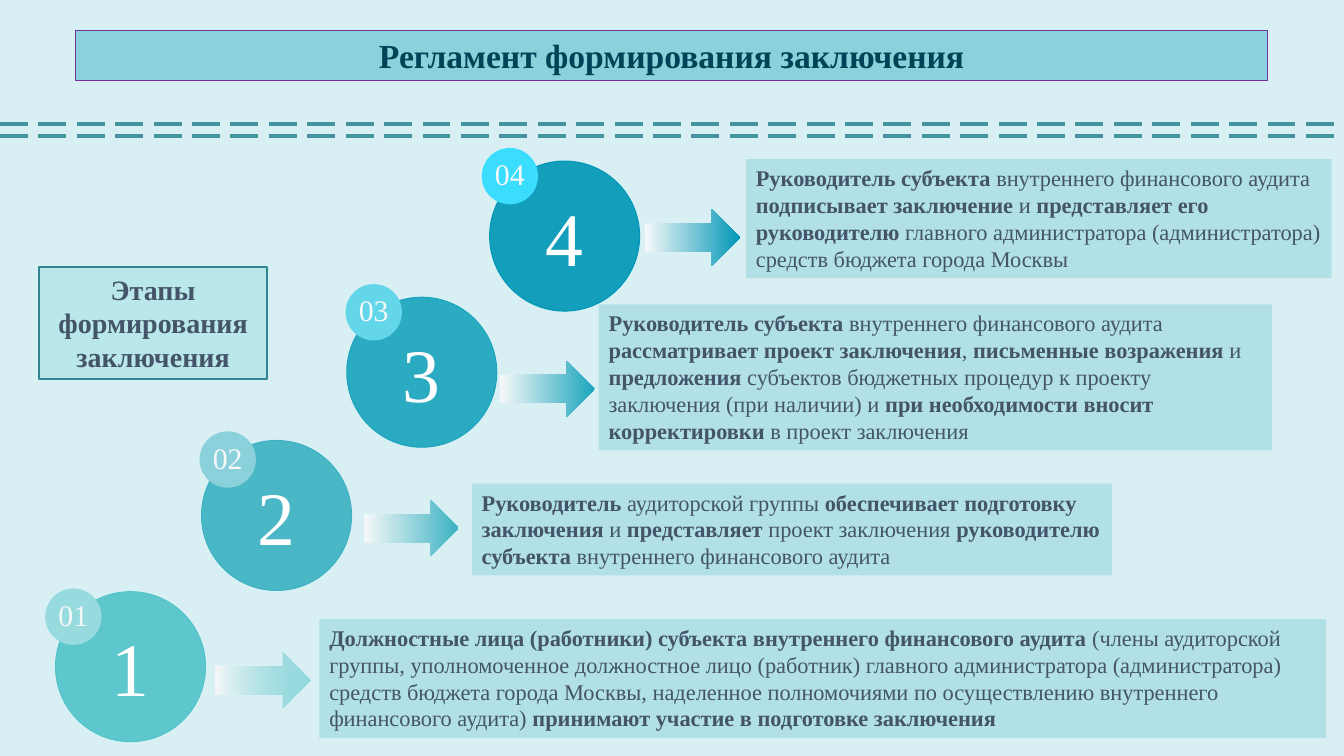
from pptx import Presentation, util as u
from pptx.dml.color import RGBColor
from pptx.enum import dml, shapes, text
from pptx.oxml import ns, xmlchemy

COLORS = {
    "background": "D8F0F3", "title": "8AD1DB", "title_line": "7030A0", "title_text": "004356",
    "label": "B9E7EA", "label_line": "2D8692", "description": "B1E0E7", "body_text": "445469",
    "dashes": "43949F", "pale": "F6F8F8", "white": "FFFFFF",
    "circle1": "51C3CA", "circle2": "3CB2C3", "circle3": "1AA5BD", "circle4": "0097B7",
    "badge1": "97DBDF", "badge2": "8AD1DB", "badge3": "63D6EA", "badge4": "3BDDFF",
}
RGB = {name: RGBColor.from_string(value) for name, value in COLORS.items()}
KIND = shapes.MSO_SHAPE
CENTER = text.PP_ALIGN.CENTER
GROWING = {"word_wrap": True, "vertical_anchor": text.MSO_ANCHOR.TOP,
           "auto_size": text.MSO_AUTO_SIZE.SHAPE_TO_FIT_TEXT}
MIDDLE = {"word_wrap": True, "vertical_anchor": text.MSO_ANCHOR.MIDDLE}
TIGHT = {"word_wrap": False, "vertical_anchor": text.MSO_ANCHOR.MIDDLE,
         "margin_left": 0, "margin_right": 0, "margin_top": 0, "margin_bottom": 0}

# Left and top of circle, badge and arrow; box of the description.
# Description pieces are split by "|": bold and regular take turns, bold first.
STAGES = [
    ((1.4, 14.91), (1.14, 14.83), (5.44, 16.43), (8.05, 15.6, 25.37, 3),
     "Должностные лица (работники) субъекта внутреннего финансового аудита |"
     "(члены аудиторской группы, уполномоченное должностное лицо (работник) главного "
     "администратора (администратора) средств бюджета города Москвы, наделенное полномочиями "
     "по осуществлению внутреннего финансового аудита) |принимают участие в подготовке заключения"),
    ((5.08, 11.1), (5.03, 10.87), (9.17, 12.6), (11.89, 12.19, 16.13, 2.31),
     "Руководитель |аудиторской группы |обеспечивает подготовку заключения| и |представляет"
     "| проект заключения |руководителю субъекта |внутреннего финансового аудита"),
    ((8.74, 7.49), (8.71, 7.16), (12.6, 9.09), (15.09, 7.67, 16.97, 3.68),
     "Руководитель субъекта |внутреннего финансового аудита |рассматривает проект заключения|, |"
     "письменные возражения |и |предложения| субъектов бюджетных процедур к проекту заключения "
     "(при наличии) и |при необходимости вносит корректировки| в проект заключения"),
    ((12.34, 4.06), (12.14, 3.73), (16.26, 5.28), (18.8, 4.01, 14.76, 3),
     "Руководитель субъекта |внутреннего финансового аудита |подписывает заключение |и |"
     "представляет его руководителю| главного администратора (администратора) "
     "средств бюджета города Москвы"),
]
CIRCLE_SIZE = (3.78, 3.78)
BADGE_SIZE = (1.42, 1.42)
ARROW_SIZE = (2.39, 1.42)

deck = Presentation()
deck.slide_width, deck.slide_height = u.Cm(33.87), u.Cm(19.05)
slide = deck.slides.add_slide(deck.slide_layouts[6])
slide.background.fill.solid()
slide.background.fill.fore_color.rgb = RGB["background"]


def add_block(kind, box, fill, line=None, width=0.75, opacity=None):
    """Add a shape without shadow; a pair of fill names makes a gradient, opacity is in percent."""
    block = slide.shapes.add_shape(kind, *map(u.Cm, box))
    block.shadow.inherit = False
    if isinstance(fill, tuple):
        block.fill.gradient()
        block.fill.gradient_angle = 0
        for stop, name in zip(block.fill.gradient_stops, fill):
            stop.color.rgb = RGB[name]
    else:
        block.fill.solid()
        block.fill.fore_color.rgb = RGB[fill]
    if opacity:
        last_color = list(block.element.spPr.iter(ns.qn("a:srgbClr")))[-1]
        alpha = xmlchemy.OxmlElement("a:alpha")
        alpha.set("val", str(opacity * 1000))
        last_color.append(alpha)
    if line:
        block.line.color.rgb = RGB[line]
        block.line.width = u.Pt(width)
    else:
        block.line.fill.background()
    return block


def write(block, pieces, size, color, frame_format, bold=True, align=CENTER, spacing=None):
    """Write the pieces as runs, bold on every second one, starting with the given state."""
    for attribute, value in frame_format.items():
        setattr(block.text_frame, attribute, value)
    paragraph = block.text_frame.paragraphs[0]
    paragraph.alignment = align
    paragraph.line_spacing = spacing
    for index, piece in enumerate(pieces.split("|")):
        run = paragraph.add_run()
        run.text = piece
        run.font.color.rgb = RGB[color]
        run_format = {"name": "Times New Roman", "size": u.Pt(size),
                      "bold": bold and index % 2 == 0}
        for attribute, value in run_format.items():
            setattr(run.font, attribute, value)


for number, (circle_at, badge_at, arrow_at, description_box, description) in enumerate(STAGES, 1):
    add_block(KIND.RIGHT_ARROW, arrow_at + ARROW_SIZE, ("pale", f"circle{number}"),
              opacity=51 if number == 1 else None)
    circle = add_block(KIND.OVAL, circle_at + CIRCLE_SIZE, f"circle{number}",
                       line=f"circle{number}", opacity=91)
    write(circle, str(number), 54, "white", MIDDLE, bold=False)
    badge = add_block(KIND.OVAL, badge_at + BADGE_SIZE, f"badge{number}")
    write(badge, f"{number:02}", 21.3, "pale", TIGHT, bold=False, spacing=0.89)
    stage_text = add_block(KIND.RECTANGLE, description_box, "description")
    write(stage_text, description, 16, "body_text", GROWING, align=text.PP_ALIGN.LEFT)

label = add_block(KIND.RECTANGLE, (0.99, 6.73, 5.74, 2.82), "label", "label_line", 1.5)
write(label, "Этапы формирования заключения", 20, "body_text", GROWING)
title = add_block(KIND.RECTANGLE, (1.9, 0.76, 30.05, 1.27), "title", "title_line")
write(title, "Регламент формирования заключения", 24, "title_text", GROWING)

for top in (3.12, 3.43):
    dashes = slide.shapes.add_connector(shapes.MSO_CONNECTOR.STRAIGHT, 0, u.Cm(top),
                                        deck.slide_width, u.Cm(top))
    dashes.line.color.rgb = RGB["dashes"]
    dashes.line.width = u.Pt(2.5)
    dashes.line.dash_style = dml.MSO_LINE.LONG_DASH
    dashes.element.spPr.append(xmlchemy.OxmlElement("a:effectLst"))

deck.save("out.pptx")
